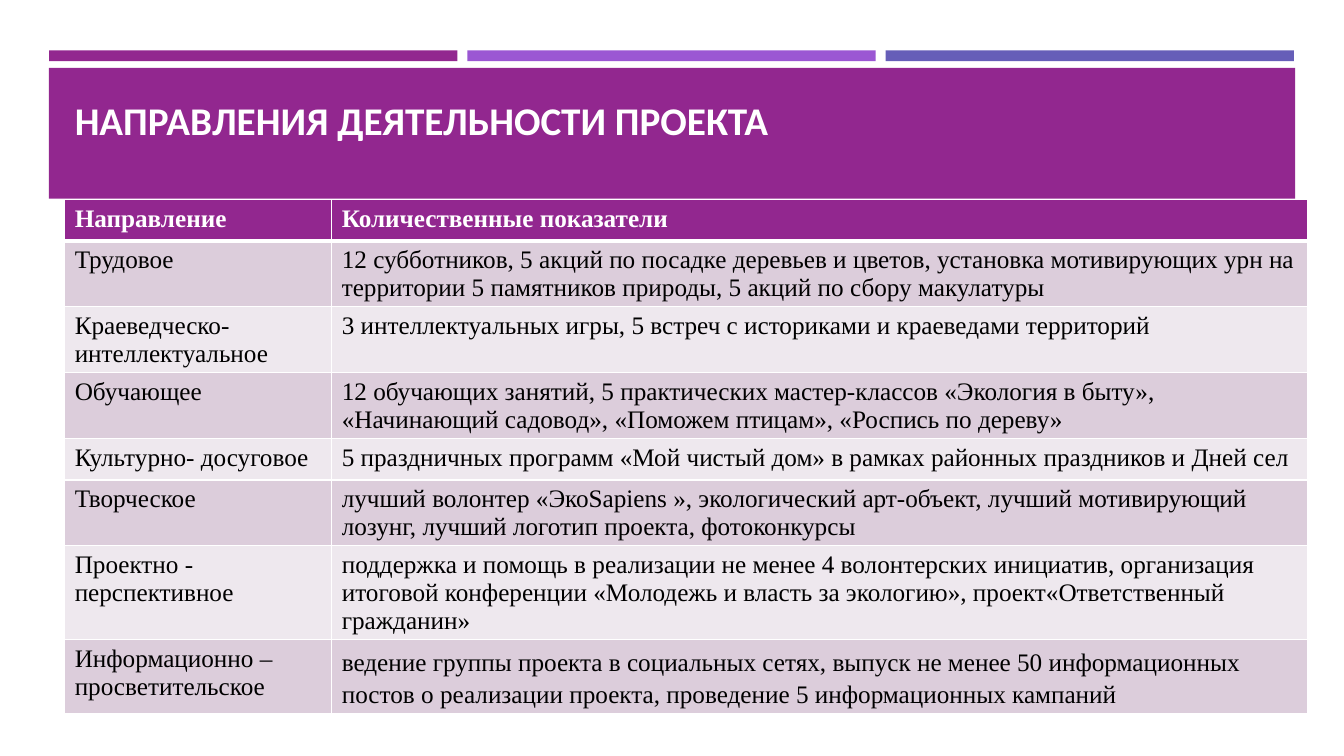
from pptx import Presentation
from pptx.dml.color import RGBColor
from pptx.enum.shapes import MSO_SHAPE
from pptx.enum.text import MSO_ANCHOR, MSO_AUTO_SIZE, PP_ALIGN
from pptx.oxml import parse_xml
from pptx.oxml.ns import nsdecls
from pptx.util import Cm, Pt

RECT = MSO_SHAPE.RECTANGLE
BOTTOM, LEFT, FIXED = MSO_ANCHOR.BOTTOM, PP_ALIGN.LEFT, MSO_AUTO_SIZE.NONE

# Content
TITLE = "НАПРАВЛЕНИЯ ДЕЯТЕЛЬНОСТИ ПРОЕКТА"
ROWS = [
    ("Направление", "Количественные показатели"),
    ("Трудовое", "12 субботников, 5 акций по посадке деревьев и цветов, установка "
     "мотивирующих урн на территории 5 памятников природы, 5 акций по сбору макулатуры"),
    ("Краеведческо-интеллектуальное",
     "3 интеллектуальных игры, 5 встреч с историками и краеведами территорий"),
    ("Обучающее", "12 обучающих занятий, 5 практических мастер-классов «Экология в быту», "
     "«Начинающий садовод», «Поможем птицам», «Роспись по дереву»"),
    ("Культурно- досуговое",
     "5 праздничных программ «Мой чистый дом» в рамках районных праздников и Дней сел"),
    ("Творческое", "лучший волонтер «ЭкоSapiens », экологический арт-объект, лучший "
     "мотивирующий лозунг, лучший логотип проекта, фотоконкурсы"),
    ("Проектно - перспективное",
     "поддержка и помощь в реализации не менее 4 волонтерских инициатив, организация "
     "итоговой конференции «Молодежь и власть за экологию», проект«Ответственный гражданин»"),
    ("Информационно – просветительское",
     "ведение группы проекта в социальных сетях, выпуск не менее 50 информационных "
     "постов о реализации проекта, проведение 5 информационных кампаний"),
]


class Theme:
    plum, violet, indigo = "92278F", "9B57D3", "665EB8"
    dark, pale = "DCCDDB", "EEE8EE"
    white, black = "FFFFFF", "000000"
    head_font, body_font = "Calibri", "Times New Roman"
    head_size, body_size = Pt(28), Pt(18)


def paint(fill, color):
    fill.solid()
    fill.fore_color.rgb = RGBColor.from_string(color)


def style(par, font, size, color, bold):
    for run in par.runs:
        run.font.name, run.font.size, run.font.bold = font, size, bold
        run.font.color.rgb = RGBColor.from_string(color)


def add_bar(slide, x, y, w, h, color):
    bar = slide.shapes.add_shape(RECT, Cm(x), Cm(y), Cm(w), Cm(h))
    bar.shadow.inherit = False
    paint(bar.fill, color)
    bar.line.fill.background()


def set_edges(cell, base):
    """Add white cell borders, with the given width in points at the bottom."""
    props = cell._tc.get_or_add_tcPr()
    edges = [("lnL", 1), ("lnR", 1), ("lnT", 1), ("lnB", base)]
    for spot, (tag, width) in enumerate(edges):
        props.insert(spot, parse_xml(
            f'<a:{tag} {nsdecls("a")} w="{Pt(width)}"><a:solidFill>'
            f'<a:srgbClr val="{Theme.white}"/></a:solidFill></a:{tag}>'))


def add_bands(slide):
    width, gap = 10.29, 0.25
    for i, color in enumerate((Theme.plum, Theme.violet, Theme.indigo)):
        add_bar(slide, 1.24 + i * (width + gap), 1.27, width, 0.27, color)
    add_bar(slide, 1.23, 1.71, 31.41, 3.3, Theme.plum)


def set_title(slide):
    title = slide.shapes.title
    title.left, title.top, title.width, title.height = Cm(1.63), Cm(1.96), Cm(30.63), Cm(1.78)
    frame = title.text_frame
    frame.text = TITLE
    frame.auto_size, frame.vertical_anchor = FIXED, BOTTOM
    par = frame.paragraphs[0]
    par.alignment = LEFT
    style(par, Theme.head_font, Theme.head_size, Theme.white, True)
    # Bring the title in front of the band
    title.element.getparent().append(title.element)


def add_grid(slide):
    widths, height = (6.73, 24.59), 1.04
    table = slide.shapes.add_table(len(ROWS), len(widths), Cm(1.63), Cm(5.03),
                                   Cm(sum(widths)), Cm(height * len(ROWS))).table
    for col, width in zip(table.columns, widths):
        col.width = Cm(width)
    for r, texts in enumerate(ROWS):
        head = r == 0
        fill = Theme.plum if head else (Theme.pale, Theme.dark)[r % 2]
        color = Theme.white if head else Theme.black
        for c, text in enumerate(texts):
            cell = table.cell(r, c)
            cell.text = text
            paint(cell.fill, fill)
            set_edges(cell, 3 if head else 1)
            style(cell.text_frame.paragraphs[0], Theme.body_font, Theme.body_size, color, head)
    # The closing paragraph is set looser
    last = table.cell(len(ROWS) - 1, 1).text_frame.paragraphs[0]
    last.line_spacing, last.space_after = 1.15, Pt(10)


def main():
    deck = Presentation()
    deck.slide_width, deck.slide_height = Cm(33.87), Cm(19.05)
    slide = deck.slides.add_slide(deck.slide_layouts[5])
    add_bands(slide)
    set_title(slide)
    add_grid(slide)
    deck.save("out.pptx")


if __name__ == "__main__":
    main()
